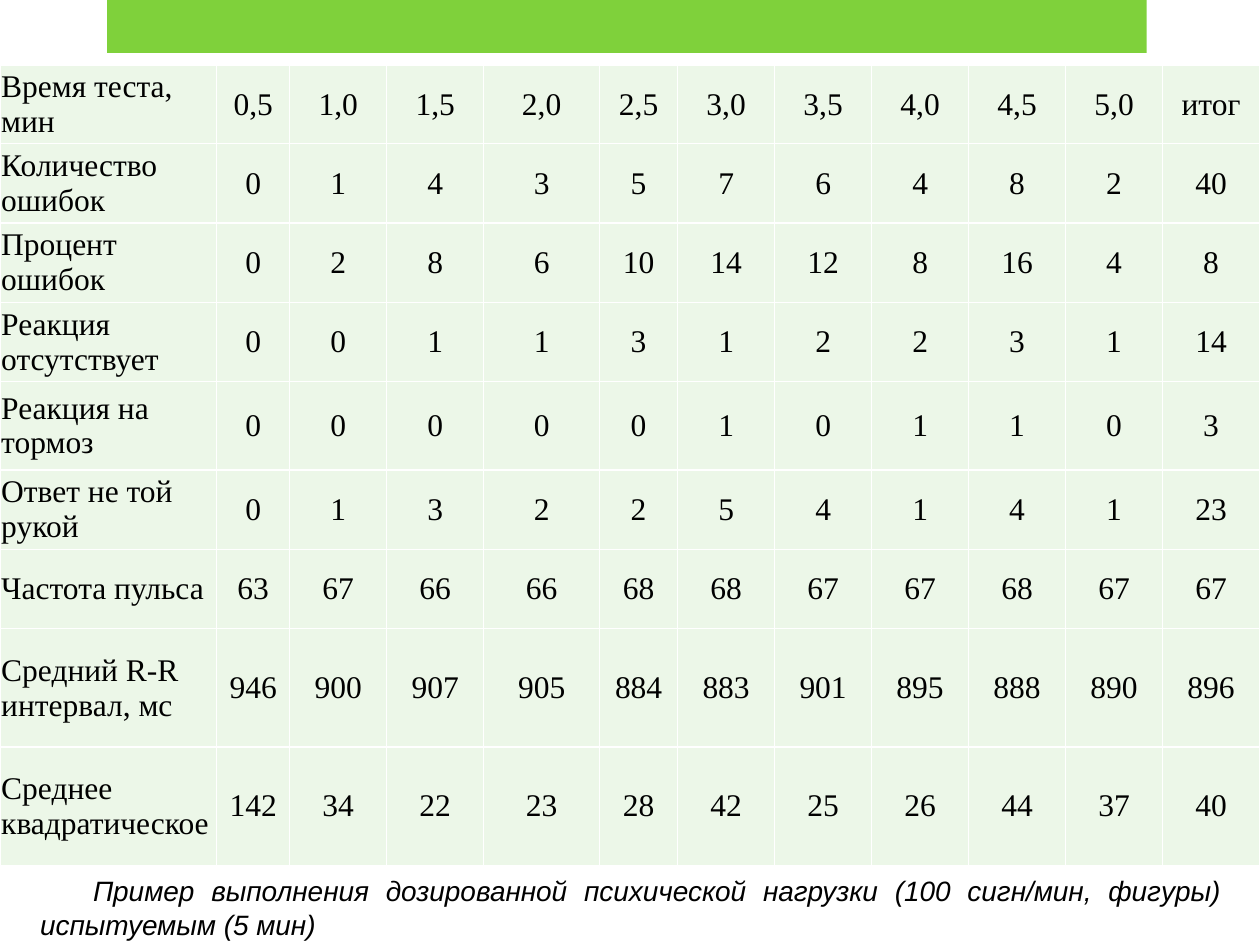
from lxml import etree
from pptx import Presentation
from pptx.dml.color import RGBColor
from pptx.enum.shapes import MSO_SHAPE
from pptx.enum.text import MSO_ANCHOR, MSO_AUTO_SIZE, PP_ALIGN
from pptx.oxml.ns import qn
from pptx.util import Inches, Pt

RECT = MSO_SHAPE.RECTANGLE
MIDDLE = MSO_ANCHOR.MIDDLE
GROW = MSO_AUTO_SIZE.SHAPE_TO_FIT_TEXT
LEFT, CENTER, JUSTIFY = PP_ALIGN.LEFT, PP_ALIGN.CENTER, PP_ALIGN.JUSTIFY

COLORS = {"bar": "7FD13B", "cell": "ECF7E8", "rule": "FFFFFF", "text": "000000"}

WIDTHS = [1.72, 0.58, 0.77, 0.77, 0.92, 0.62] + [0.77] * 6
HEIGHTS = [0.62, 0.63, 0.63, 0.63, 0.7, 0.63, 0.63, 0.94, 0.94]
ROWS = [
    ("Время теста, мин", "0,5 1,0 1,5 2,0 2,5 3,0 3,5 4,0 4,5 5,0 итог"),
    ("Количество ошибок", "0 1 4 3 5 7 6 4 8 2 40"),
    ("Процент ошибок", "0 2 8 6 10 14 12 8 16 4 8"),
    ("Реакция отсутствует", "0 0 1 1 3 1 2 2 3 1 14"),
    ("Реакция на тормоз", "0 0 0 0 0 1 0 1 1 0 3"),
    ("Ответ не той рукой", "0 1 3 2 2 5 4 1 4 1 23"),
    ("Частота пульса", "63 67 66 66 68 68 67 67 68 67 67"),
    ("Средний R-R интервал, мс", "946 900 907 905 884 883 901 895 888 890 896"),
    ("Среднее квадратическое", "142 34 22 23 28 42 25 26 44 37 40"),
]
CAPTION = ("Пример выполнения дозированной психической нагрузки "
           "(100 сигн/мин, фигуры) испытуемым (5 мин)")


def paint(fill, name):
    fill.solid()
    fill.fore_color.rgb = RGBColor.from_string(COLORS[name])


def write(frame, text, font="Times New Roman", size=18, align=LEFT,
          italic=False, indent=0):
    """Put one formatted paragraph into a text frame."""
    frame.word_wrap = True
    para = frame.paragraphs[0]
    para.alignment = align
    if indent:
        para._p.get_or_add_pPr().set("indent", str(Inches(indent)))
    run = para.add_run()
    run.text = text
    run.font.name = font
    run.font.size = Pt(size)
    run.font.italic = italic
    run.font.color.rgb = RGBColor.from_string(COLORS["text"])


def edge(cell):
    """Draw thin rules on all four sides, ahead of the cell fill."""
    props = cell._tc.get_or_add_tcPr()
    for spot, side in enumerate(("a:lnL", "a:lnR", "a:lnT", "a:lnB")):
        line = etree.Element(qn(side), w=str(Pt(1)))
        fill = etree.SubElement(line, qn("a:solidFill"))
        etree.SubElement(fill, qn("a:srgbClr"), val=COLORS["rule"])
        props.insert(spot, line)


class Page:
    def __init__(self, slide):
        self.shapes = slide.shapes
        self.pad = Inches(0.01)

    def bar(self, *box):
        shape = self.shapes.add_shape(RECT, *map(Inches, box))
        shape.shadow.inherit = False
        paint(shape.fill, "bar")
        shape.line.fill.background()

    def cell(self, cell, text, align):
        cell.margin_left = cell.margin_right = self.pad
        cell.margin_top = cell.margin_bottom = self.pad
        cell.vertical_anchor = MIDDLE
        write(cell.text_frame, text, align=align)
        paint(cell.fill, "cell")
        edge(cell)

    def table(self, left, top):
        box = map(Inches, (left, top, sum(WIDTHS), sum(HEIGHTS)))
        table = self.shapes.add_table(len(HEIGHTS), len(WIDTHS), *box).table
        table.first_row = table.horz_banding = False
        for col, width in zip(table.columns, WIDTHS):
            col.width = Inches(width)
        for row, height, (label, data) in zip(table.rows, HEIGHTS, ROWS):
            row.height = Inches(height)
            for i, text in enumerate([label] + data.split()):
                self.cell(row.cells[i], text, CENTER if i else LEFT)

    def note(self, text, *box):
        frame = self.shapes.add_textbox(*map(Inches, box)).text_frame
        frame.vertical_anchor = MIDDLE
        frame.auto_size = GROW
        write(frame, text, font="Arial", size=16, align=JUSTIFY,
              italic=True, indent=0.42)


def main():
    deck = Presentation()
    deck.slide_width, deck.slide_height = Inches(10), Inches(7.5)
    page = Page(deck.slides.add_slide(deck.slide_layouts[6]))
    # Top band
    page.bar(0.85, 0, 8.25, 0.42)
    # Test results
    page.table(0, 0.52)
    # Caption
    page.note(CAPTION, 0.22, 6.88, 9.57, 0.64)
    deck.save("out.pptx")


if __name__ == "__main__":
    main()
